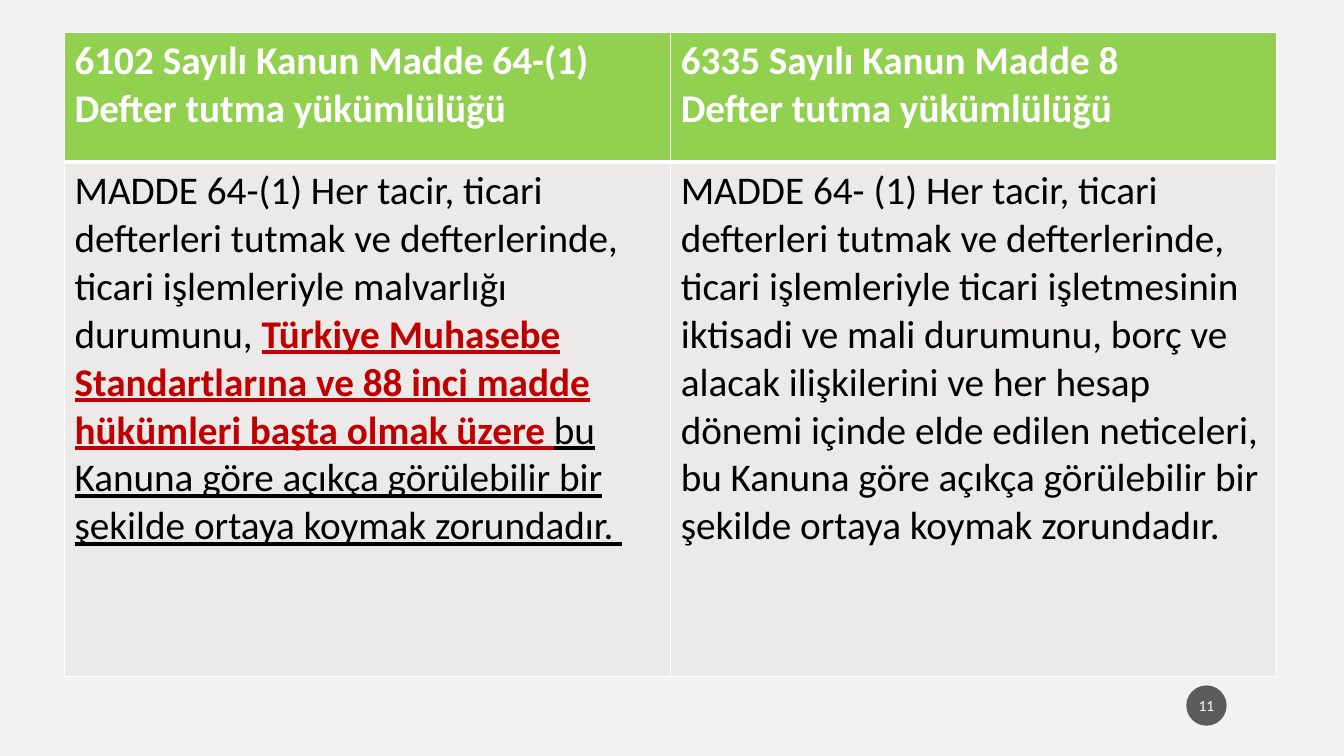
from lxml import etree
from pptx import Presentation
from pptx.dml.color import RGBColor
from pptx.enum.shapes import MSO_SHAPE
from pptx.enum.text import MSO_ANCHOR, PP_ALIGN
from pptx.oxml.ns import qn
from pptx.util import Pt

OVAL = MSO_SHAPE.OVAL
MIDDLE = MSO_ANCHOR.MIDDLE
CENTER = PP_ALIGN.CENTER

FONT = "Calibri"
COLORS = {
    "background": "F2F2F2",
    "header": "92D050",
    "body": "ECEAE8",
    "white": "FFFFFF",
    "black": "000000",
    "red": "C00000",
    "badge": "1D1D1D",
}

# Each cell is a list of paragraphs; each run is (text, color, bold, underline).
HEADERS = [
    [[(line, "white", True, False)] for line in lines]
    for lines in (
        ("6102 Sayılı Kanun Madde 64-(1)", "Defter tutma yükümlülüğü"),
        ("6335 Sayılı Kanun Madde 8", "Defter tutma yükümlülüğü"),
    )
]
ARTICLES = [
    [[
        ("MADDE 64-(1) Her tacir, ticari defterleri tutmak ve defterlerinde, "
         "ticari işlemleriyle malvarlığı durumunu, ", "black", False, False),
        ("Türkiye Muhasebe Standartlarına ve 88 inci madde hükümleri "
         "başta olmak üzere ", "red", True, True),
        ("bu Kanuna göre açıkça görülebilir bir şekilde ortaya koymak "
         "zorundadır. ", "black", False, True),
    ]],
    [[
        ("MADDE 64- (1) Her tacir, ticari defterleri tutmak ve defterlerinde, "
         "ticari işlemleriyle ticari işletmesinin iktisadi ve mali durumunu, "
         "borç ve alacak ilişkilerini ve her hesap dönemi içinde elde edilen "
         "neticeleri, bu Kanuna göre açıkça görülebilir bir şekilde ortaya "
         "koymak zorundadır.", "black", False, False),
    ]],
]
# Rows: (cells, fill, height, bottom border width, top border width)
ROWS = [
    (HEADERS, "header", 92.9, 3, 1),
    (ARTICLES, "body", 367.4, 1, 3),
]
PAGE_NUMBER = "11"
TABLE_LEFT, TABLE_TOP, COLUMN_WIDTH = 46.1, 23, 433
BADGE_LEFT, BADGE_TOP, BADGE_SIZE = 847.4, 489.6, 28.8


def rgb(name):
    return RGBColor.from_string(COLORS[name])


def add_run(p, text, size, color, bold=False, underline=False):
    r = p.add_run()
    r.text = text
    r.font.name = FONT
    r.font.size = Pt(size)
    r.font.color.rgb = rgb(color)
    r.font.bold = bold
    r.font.underline = underline


def set_borders(cell, widths):
    """Draw white cell borders; widths maps a side (L, R, T, B) to points."""
    tc_pr = cell._tc.get_or_add_tcPr()
    for i, (side, width) in enumerate(widths.items()):
        ln = etree.Element(qn(f"a:ln{side}"), w=str(Pt(width)))
        fill = etree.SubElement(ln, qn("a:solidFill"))
        etree.SubElement(fill, qn("a:srgbClr"), val=COLORS["white"])
        tc_pr.insert(i, ln)


def add_comparison(s):
    table = s.shapes.add_table(
        len(ROWS), len(HEADERS), Pt(TABLE_LEFT), Pt(TABLE_TOP),
        Pt(COLUMN_WIDTH * len(HEADERS)), Pt(sum(row[2] for row in ROWS)),
    ).table
    for column in table.columns:
        column.width = Pt(COLUMN_WIDTH)
    for i, (cells, fill, height, bottom, top) in enumerate(ROWS):
        table.rows[i].height = Pt(height)
        for j, paragraphs in enumerate(cells):
            cell = table.cell(i, j)
            cell.fill.solid()
            cell.fill.fore_color.rgb = rgb(fill)
            set_borders(cell, {"L": 1, "R": 1, "T": top, "B": bottom})
            tf = cell.text_frame
            for k, runs in enumerate(paragraphs):
                p = tf.add_paragraph() if k else tf.paragraphs[0]
                for text, color, bold, underline in runs:
                    add_run(p, text, 28, color, bold, underline)


def add_page_badge(s):
    sp = s.shapes.add_shape(OVAL, Pt(BADGE_LEFT), Pt(BADGE_TOP),
                            Pt(BADGE_SIZE), Pt(BADGE_SIZE))
    sp.shadow.inherit = False
    sp.line.fill.background()
    sp.fill.solid()
    sp.fill.fore_color.rgb = rgb("badge")
    color = sp._element.spPr.find(qn("a:solidFill"))[0]
    etree.SubElement(color, qn("a:alpha"), val="70000")
    tf = sp.text_frame
    tf.word_wrap = False
    tf.vertical_anchor = MIDDLE
    tf.margin_left = tf.margin_right = Pt(1.44)
    tf.margin_top = tf.margin_bottom = Pt(3.6)
    p = tf.paragraphs[0]
    p.alignment = CENTER
    add_run(p, PAGE_NUMBER, 11, "white")


def main():
    prs = Presentation()
    prs.slide_width, prs.slide_height = Pt(960), Pt(540)
    s = prs.slides.add_slide(prs.slide_layouts[6])
    s.background.fill.solid()
    s.background.fill.fore_color.rgb = rgb("background")
    add_comparison(s)
    add_page_badge(s)
    prs.save("out.pptx")


if __name__ == "__main__":
    main()
